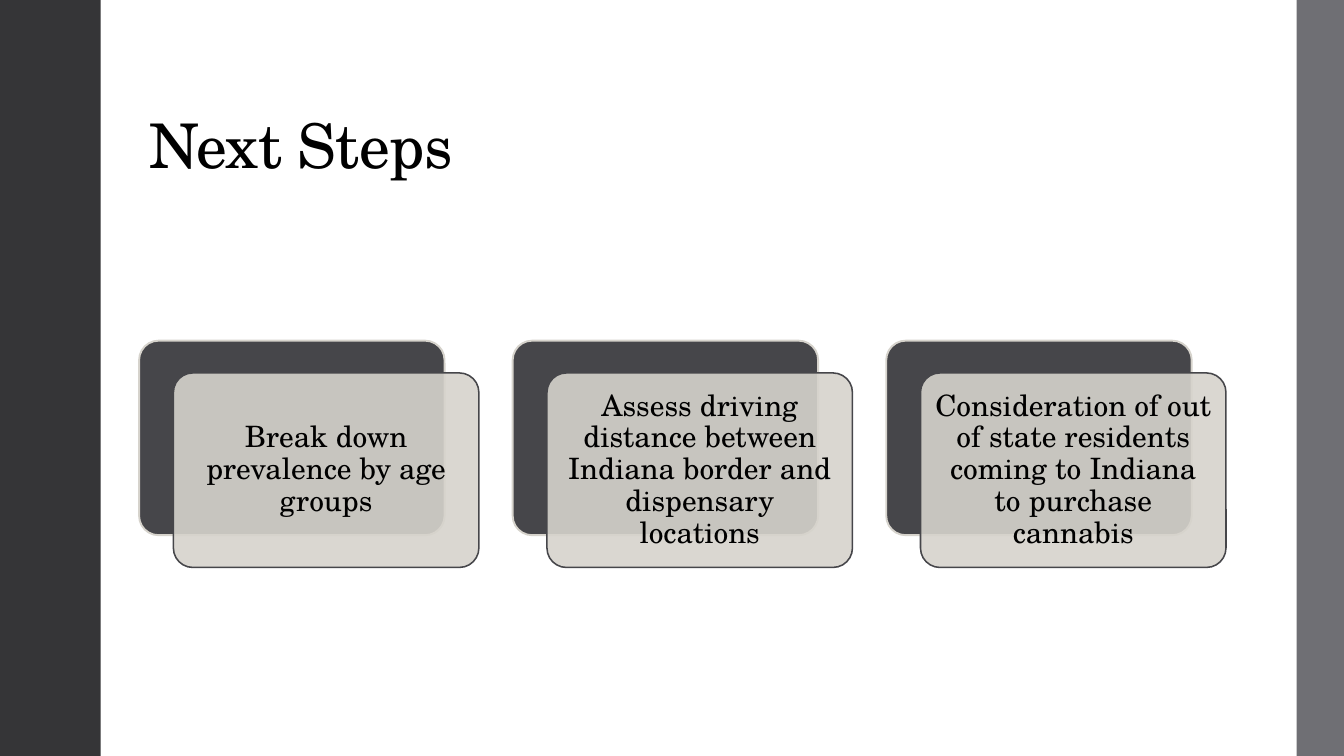
from lxml import etree
from pptx import Presentation
from pptx.dml.color import RGBColor
from pptx.enum.shapes import MSO_SHAPE
from pptx.enum.text import MSO_ANCHOR, MSO_AUTO_SIZE, PP_ALIGN
from pptx.oxml.ns import qn
from pptx.util import Inches, Pt

RECTANGLE = MSO_SHAPE.RECTANGLE
ROUNDED = MSO_SHAPE.ROUNDED_RECTANGLE
LEFT, CENTER = PP_ALIGN.LEFT, PP_ALIGN.CENTER
MIDDLE, BOTTOM = MSO_ANCHOR.MIDDLE, MSO_ANCHOR.BOTTOM
NO_AUTOFIT = MSO_AUTO_SIZE.NONE
FONT = "TeX Gyre Schola"
BLACK, CHARCOAL, GRAY = "000000", "353537", "6F6F74"
DARK, SAND = "46464A", "D6D3CC"
STEPS = [
    "Break down prevalence by age groups",
    "Assess driving distance between Indiana border and dispensary locations",
    "Consideration of out of state residents coming to Indiana to purchase cannabis",
]


def add_block(kind, left, top, width, height, fill, line=None, line_width=1):
    shape = slide.shapes.add_shape(
        kind, Inches(left), Inches(top), Inches(width), Inches(height))
    shape.shadow.inherit = False
    shape.fill.solid()
    shape.fill.fore_color.rgb = RGBColor.from_string(fill)
    if line:
        shape.line.color.rgb = RGBColor.from_string(line)
        shape.line.width = Pt(line_width)
    else:
        shape.line.fill.background()
    return shape


def write_text(shape, text, size, alignment, anchor, inset):
    frame = shape.text_frame
    frame.text = text
    frame.word_wrap = True
    frame.auto_size = NO_AUTOFIT
    frame.vertical_anchor = anchor
    frame.margin_left = frame.margin_right = Inches(inset)
    paragraph = frame.paragraphs[0]
    paragraph.alignment = alignment
    paragraph.line_spacing = 0.9
    paragraph.font.name = FONT
    paragraph.font.size = Pt(size)
    paragraph.font.color.rgb = RGBColor.from_string(BLACK)


presentation = Presentation()
presentation.slide_width = Inches(13.33)
presentation.slide_height = Inches(7.5)
slide = presentation.slides.add_slide(presentation.slide_layouts[5])

title = slide.shapes.title
title.left, title.top = Inches(1.38), Inches(0.4)
title.width, title.height = Inches(10.78), Inches(1.45)
write_text(title, "Next Steps", 44, LEFT, BOTTOM, 0.1)
title_run = title.text_frame.paragraphs[0].runs[0]
title_run._r.get_or_add_rPr().set("spc", "-50")

add_block(RECTANGLE, 0, 0, 1, 7.5, CHARCOAL)
add_block(RECTANGLE, 12.86, 0, 0.47, 7.5, GRAY)

card_width, card_height = 3.03, 1.93
for index, step in enumerate(STEPS):
    left = 1.38 + index * 3.705
    back = add_block(ROUNDED, left, 3.38, card_width, card_height, DARK, SAND, 1.35)
    front = add_block(ROUNDED, left + 0.34, 3.7, card_width, card_height, SAND, DARK, 1.1)
    for card in (back, front):
        card.adjustments[0] = 0.1
    front_color = front.fill._xPr.find(qn("a:solidFill"))[0]
    etree.SubElement(front_color, qn("a:alpha"), val="90000")
    write_text(front, step, 21, CENTER, MIDDLE, 0.09)

presentation.save("out.pptx")
